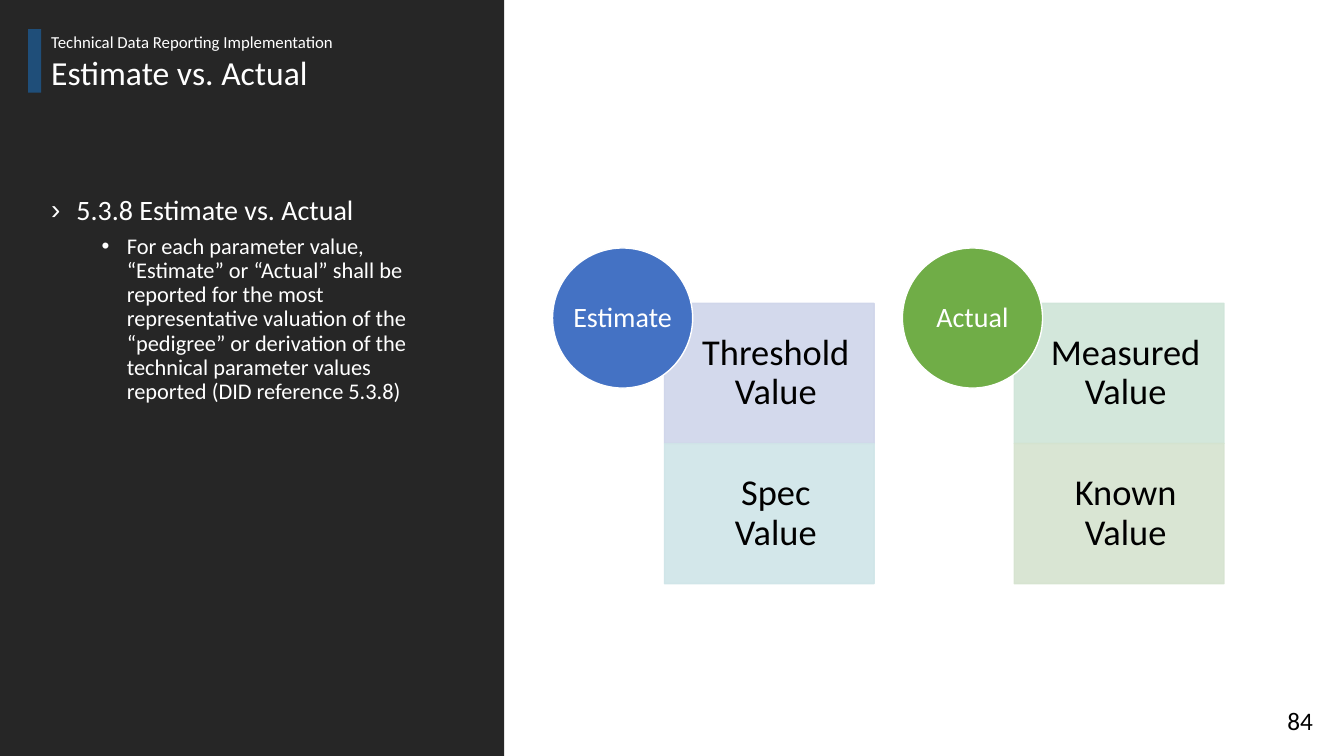
from typing import NamedTuple

from lxml.etree import SubElement
from pptx import Presentation
from pptx.dml.color import RGBColor
from pptx.enum.shapes import MSO_SHAPE as Shape
from pptx.enum.text import MSO_ANCHOR as Anchor, PP_ALIGN as Align
from pptx.oxml.ns import qn
from pptx.util import Pt

EMU_PER_PX = 9144  # 100 px to the inch
FONT = "Calibri"
WHITE, BLACK = "FFFFFF", "000000"
DARK, ACCENT = "262626", "1F4E79"

CIRCLE = 139
CIRCLE_TOP = 246
CARD_WIDTH, CARD_HEIGHT = 208, 139
CARD_TOP = 301
CARD_OFFSET = 111
GROUP_LEFT, GROUP_STEP = 548, 347


class Card(NamedTuple):
    text: str
    color: str


class Group(NamedTuple):
    label: str
    color: str
    cards: tuple[Card, ...]


class Label(NamedTuple):
    text: str
    area: tuple[int, int, int, int]
    size: int
    color: str


class Bullet(NamedTuple):
    text: str
    mark: str
    margin: int
    size: int


GROUPS = (
    Group("Estimate", "4472C4", (Card("Threshold Value", "CFD5EA"), Card("Spec Value", "CFE5E8"))),
    Group("Actual", "70AD47", (Card("Measured Value", "CFE5D8"), Card("Known Value", "D5E3CF"))),
)
LABELS = (
    Label("84", (1267, 698, 55, 40), 18, BLACK),
    Label("Estimate vs. Actual", (41, 51, 528, 55), 24, WHITE),
    Label("Technical Data Reporting Implementation", (41, 29, 473, 30), 12, WHITE),
)
BULLETS = (
    Bullet("5.3.8 Estimate vs. Actual", "›", 25, 20),
    Bullet(
        "For each parameter value, “Estimate” or “Actual” shall be reported for the most "
        "representative valuation of the “pedigree” or derivation of the technical parameter "
        "values reported (DID reference 5.3.8)",
        "•", 75, 16,
    ),
)


def px(length: int) -> int:
    return length * EMU_PER_PX


def rgb(color: str) -> RGBColor:
    return RGBColor.from_string(color)


def style(para, size: int, color: str) -> None:
    para.line_spacing = 0.9
    para.font.name = FONT
    para.font.size = Pt(size)
    para.font.color.rgb = rgb(color)


def add_block(slide, kind, area, fill: str, line: str | None = None):
    shape = slide.shapes.add_shape(kind, *map(px, area))
    shape.shadow.inherit = False
    shape.fill.solid()
    shape.fill.fore_color.rgb = rgb(fill)
    if line:
        shape.line.color.rgb = rgb(line)
        shape.line.width = Pt(1)
    else:
        shape.line.fill.background()
    return shape


def set_opacity(shape, percent: int) -> None:
    """Apply the same opacity to the fill and the outline."""
    for color in shape._element.spPr.iter(qn("a:srgbClr")):
        SubElement(color, qn("a:alpha"), val=str(percent * 1000))


def write_centred(shape, text: str, size: int, color: str, insets, wrap: bool) -> None:
    frame = shape.text_frame
    frame.text = text
    frame.word_wrap = wrap
    frame.vertical_anchor = Anchor.MIDDLE
    frame.margin_left, frame.margin_top, frame.margin_right, frame.margin_bottom = map(px, insets)
    para = frame.paragraphs[0]
    para.alignment = Align.CENTER
    style(para, size, color)


def add_label(slide, label: Label) -> None:
    frame = slide.shapes.add_textbox(*map(px, label.area)).text_frame
    frame.word_wrap = True
    frame.text = label.text
    style(frame.paragraphs[0], label.size, label.color)


def add_bullets(slide, area, bullets: tuple[Bullet, ...]) -> None:
    frame = slide.shapes.add_textbox(*map(px, area)).text_frame
    frame.word_wrap = True
    frame.text = "\n".join(bullet.text for bullet in bullets)
    for level, (para, bullet) in enumerate(zip(frame.paragraphs, bullets)):
        para.level = level
        para.space_after = Pt(6)
        properties = para._p.get_or_add_pPr()
        properties.set("marL", str(px(bullet.margin)))
        properties.set("indent", str(px(-25)))
        SubElement(properties, qn("a:buFont"), typeface="Arial")
        SubElement(properties, qn("a:buChar"), char=bullet.mark)
        style(para, bullet.size, WHITE)


def add_group(slide, left: int, group: Group) -> None:
    """Draw stacked cards with a labelled circle over their top left corner."""
    for row, card in enumerate(group.cards):
        area = (left + CARD_OFFSET, CARD_TOP + row * CARD_HEIGHT, CARD_WIDTH, CARD_HEIGHT)
        block = add_block(slide, Shape.RECTANGLE, area, card.color, card.color)
        set_opacity(block, 90)
        write_centred(block, card.text, 26, BLACK, (33, 20, 20, 20), True)
    circle = add_block(slide, Shape.OVAL, (left, CIRCLE_TOP, CIRCLE, CIRCLE), group.color, WHITE)
    write_centred(circle, group.label, 20, WHITE, (0, 0, 0, 0), False)


def main() -> None:
    deck = Presentation()
    deck.slide_width, deck.slide_height = px(1333), px(750)
    slide = deck.slides.add_slide(deck.slide_layouts[6])
    add_block(slide, Shape.RECTANGLE, (0, 0, 500, 750), DARK)
    add_block(slide, Shape.RECTANGLE, (28, 29, 13, 63), ACCENT)
    for label in LABELS:
        add_label(slide, label)
    add_bullets(slide, (41, 190, 406, 218), BULLETS)
    for column, group in enumerate(GROUPS):
        add_group(slide, GROUP_LEFT + column * GROUP_STEP, group)
    deck.save("out.pptx")


if __name__ == "__main__":
    main()
